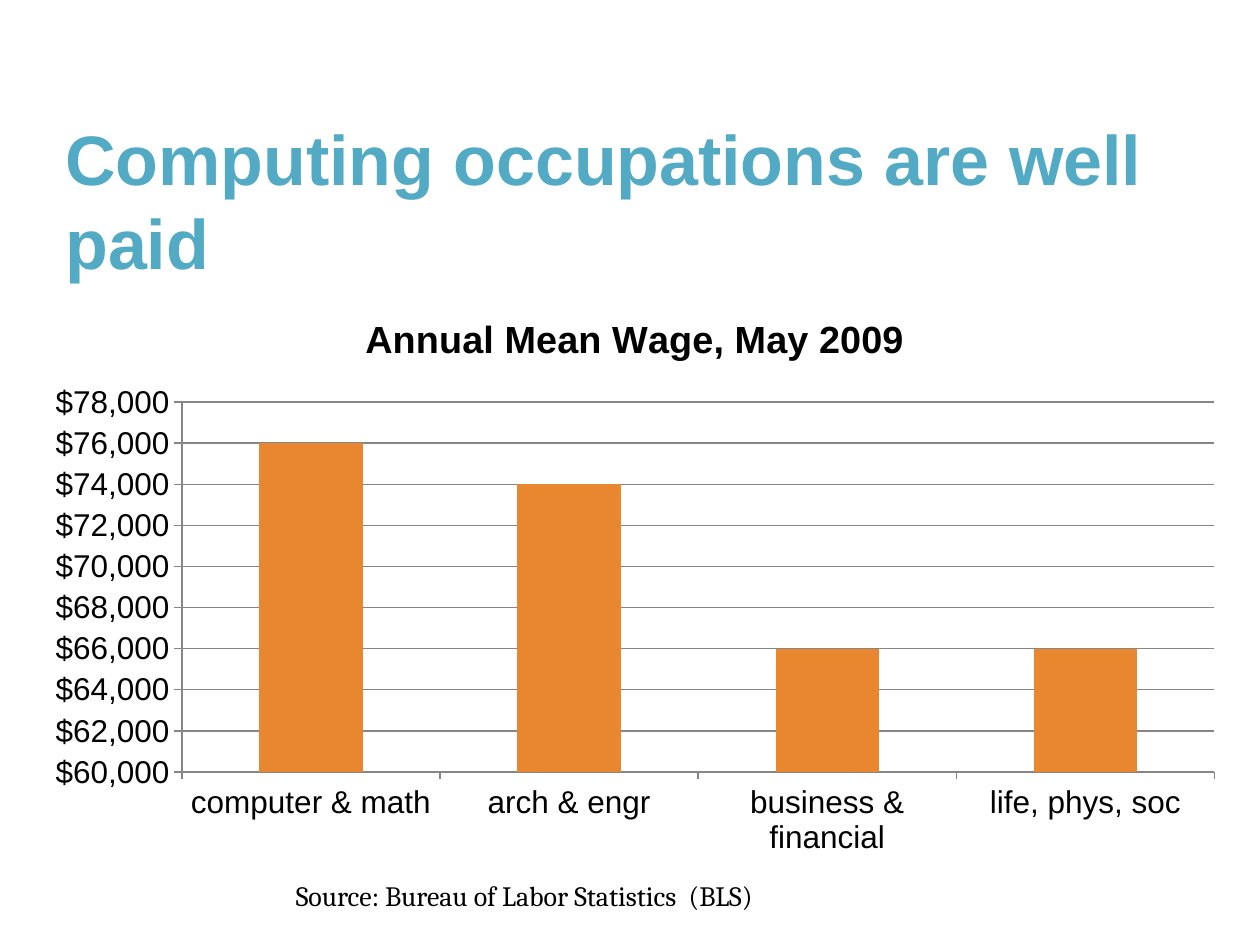
from pptx import Presentation
from pptx.chart.data import CategoryChartData
from pptx.dml.color import RGBColor
from pptx.enum.chart import XL_CHART_TYPE, XL_TICK_MARK
from pptx.enum.text import MSO_ANCHOR, MSO_AUTO_SIZE
from pptx.util import Inches, Pt

TITLE = "Computing occupations are well paid"
SOURCE = "Source: Bureau of Labor Statistics  (BLS)"
CHART_TITLE = "Annual Mean Wage, May 2009"
WAGES = {
    "computer & math": 76000,
    "arch & engr": 74000,
    "business & financial": 66000,
    "life, phys, soc": 66000,
}
COLORS = {"title": "52AAC4", "bar": "E88730", "text": "000000", "line": "868686"}


def color(name):
    return RGBColor.from_string(COLORS[name])


def style_font(font, size, name="Arial", color_name="text", bold=False):
    font.name = name
    font.size = Pt(size)
    font.bold = bold
    font.color.rgb = color(color_name)


def add_text(slide, text, box, anchor=MSO_ANCHOR.TOP,
             auto_size=MSO_AUTO_SIZE.NONE, **font_format):
    frame = slide.shapes.add_textbox(*map(Inches, box)).text_frame
    frame.word_wrap = True
    frame.auto_size = auto_size
    frame.vertical_anchor = anchor
    run = frame.paragraphs[0].add_run()
    run.text = text
    style_font(run.font, **font_format)


def style_line(line):
    line.color.rgb = color("line")
    line.width = Pt(0.75)


def add_wage_chart(slide, box):
    data = CategoryChartData()
    data.categories = list(WAGES)
    data.add_series("Series 1", list(WAGES.values()))
    chart = slide.shapes.add_chart(
        XL_CHART_TYPE.COLUMN_CLUSTERED, *map(Inches, box), data
    ).chart
    style_font(chart.font, 18)
    chart.has_legend = False

    chart.has_title = True
    title_frame = chart.chart_title.text_frame
    title_frame.text = CHART_TITLE
    style_font(title_frame.paragraphs[0].runs[0].font, 21.6, bold=True)
    chart.chart_title.include_in_layout = False

    plot = chart.plots[0]
    plot.gap_width = 150
    plot.vary_by_categories = False
    fill = plot.series[0].format.fill
    fill.solid()
    fill.fore_color.rgb = color("bar")

    for axis in (chart.category_axis, chart.value_axis):
        axis.major_tick_mark = XL_TICK_MARK.OUTSIDE
        style_line(axis.format.line)
    value_axis = chart.value_axis
    value_axis.minimum_scale = 60000
    value_axis.maximum_scale = 78000
    value_axis.major_unit = 2000
    value_axis.has_major_gridlines = True
    style_line(value_axis.major_gridlines.format.line)
    value_axis.tick_labels.number_format = '"$"#,##0'
    value_axis.tick_labels.number_format_is_linked = False


def main():
    presentation = Presentation()
    presentation.slide_width = Inches(10)
    presentation.slide_height = Inches(7.5)
    slide = presentation.slides.add_slide(presentation.slide_layouts[6])
    add_text(slide, TITLE, (0.42, 0.83, 9.08, 1.5), anchor=MSO_ANCHOR.MIDDLE,
             size=40, color_name="title", bold=True)
    add_wage_chart(slide, (0.25, 2.3, 9.58, 4.58))
    add_text(slide, SOURCE, (2.25, 6.92, 4.33, 0.37),
             auto_size=MSO_AUTO_SIZE.SHAPE_TO_FIT_TEXT, size=16, name="Cambria")
    presentation.save("out.pptx")


if __name__ == "__main__":
    main()
